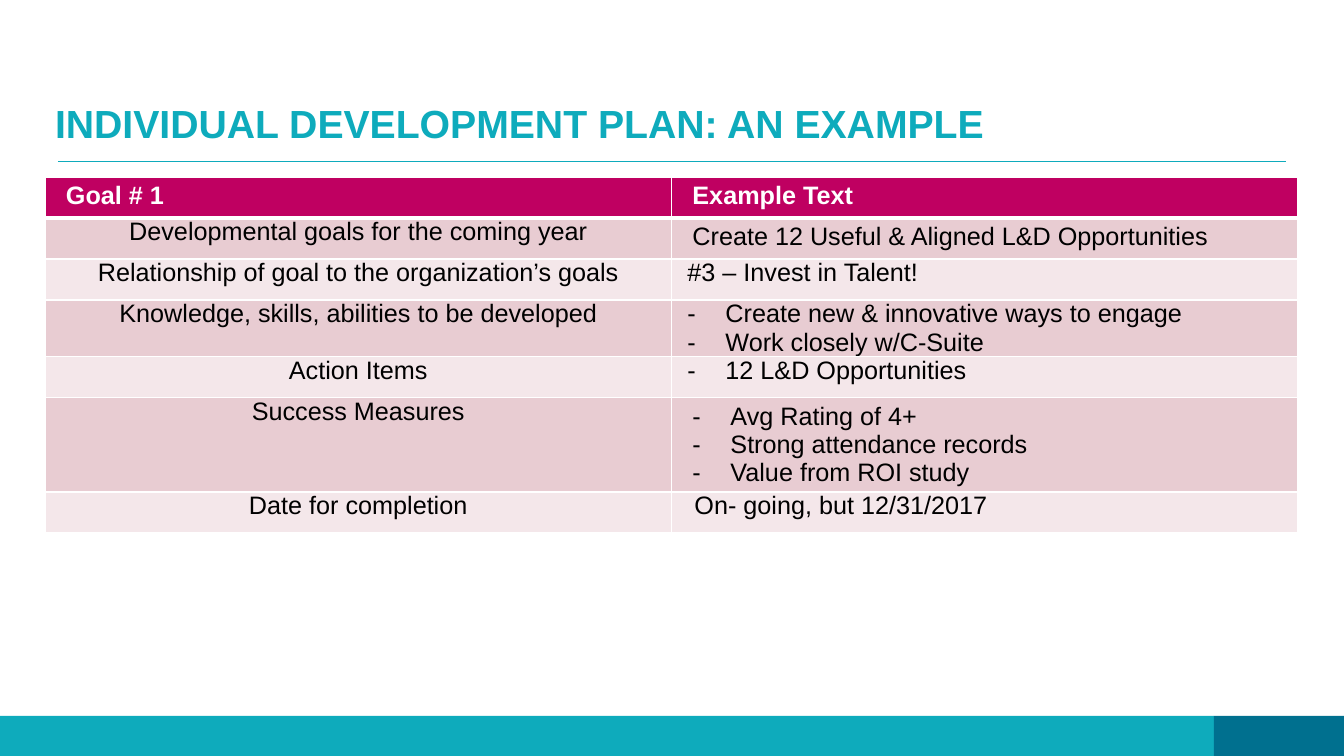
from lxml import etree
from pptx import Presentation
from pptx.dml.color import RGBColor
from pptx.enum.shapes import MSO_CONNECTOR, MSO_SHAPE
from pptx.enum.text import MSO_ANCHOR, MSO_AUTO_SIZE, PP_ALIGN
from pptx.oxml.ns import qn
from pptx.util import Pt

PX = 914400 / 100.8
LEFT, CENTER = PP_ALIGN.LEFT, PP_ALIGN.CENTER
TOP, BOTTOM = MSO_ANCHOR.TOP, MSO_ANCHOR.BOTTOM
TEAL, BLUE, MAGENTA = "0EABBC", "00708F", "BF0061"
ROSE, PALE_ROSE = "E8CCD2", "F4E7EA"
WHITE, BLACK = "FFFFFF", "000000"
ROOMY, TIGHT = (21, 5), (16, 0)
TITLE_ONLY = 5


def px(*lengths):
    """Turn pixel lengths into a list of EMU values."""
    return [round(length * PX) for length in lengths]


def rgb(color):
    return RGBColor.from_string(color)


deck = Presentation()
deck.slide_width, deck.slide_height = px(1344, 756)
page = deck.slides.add_slide(deck.slide_layouts[TITLE_ONLY])

# Footer bands and title rule
for left, width, color in [(0, 1214, TEAL), (1214, 130, BLUE)]:
    band = page.shapes.add_shape(MSO_SHAPE.RECTANGLE, *px(left, 716, width, 40))
    band.shadow.inherit = False
    band.fill.solid()
    band.fill.fore_color.rgb = rgb(color)
    band.line.fill.background()

rule = page.shapes.add_connector(MSO_CONNECTOR.STRAIGHT, *px(58, 161, 1286, 161))
rule.line.color.rgb = rgb(TEAL)
rule.line.width = Pt(0.5)
etree.SubElement(rule.element.spPr, qn("a:effectLst"))

# Title
title = page.shapes.title
title.left, title.top, title.width, title.height = px(45, 40, 1253, 112)
frame = title.text_frame
frame.text = "INDIVIDUAL DEVELOPMENT PLAN: AN EXAMPLE"
frame.auto_size = MSO_AUTO_SIZE.NONE
frame.word_wrap = True
frame.vertical_anchor = BOTTOM
para = frame.paragraphs[0]
para.alignment = LEFT
para.line_spacing = 0.9
font = para.runs[0].font
font.name, font.size, font.bold = "Arial", Pt(28), True
font.color.rgb = rgb(TEAL)

# Plan table: label, example lines, whether the lines are a list, example margins
plan = [
    ("Goal # 1", ["Example Text"], False, ROOMY),
    ("Developmental goals for the coming year",
     ["Create 12 Useful & Aligned L&D Opportunities"], False, ROOMY),
    ("Relationship of goal to the organization’s goals",
     ["#3 – Invest in Talent!"], False, TIGHT),
    ("Knowledge, skills, abilities to be developed",
     ["Create new & innovative ways to engage", "Work closely w/C-Suite"], True, TIGHT),
    ("Action Items", ["12 L&D Opportunities"], True, TIGHT),
    ("Success Measures",
     ["Avg Rating of 4+", "Strong attendance records", "Value from ROI study"],
     True, ROOMY),
    ("Date for completion", [" On- going, but 12/31/2017"], False, TIGHT),
]
table = page.shapes.add_table(len(plan), 2, *px(45, 177, 1253, 287)).table

for row, (label, examples, listed, margins) in enumerate(plan):
    header = row == 0
    row_fill = MAGENTA if header else (ROSE if row % 2 else PALE_ROSE)
    label_margins = ROOMY if header else TIGHT
    columns = [([label], False, label_margins), (examples, listed, margins)]
    for column, (lines, bulleted, (side, edge)) in enumerate(columns):
        cell = table.cell(row, column)
        cell.margin_left, cell.margin_right = px(side, side)
        cell.margin_top, cell.margin_bottom = px(edge, edge)
        cell.vertical_anchor = TOP

        borders = {"L": 1, "R": 1, "T": 3 if row == 1 else 1, "B": 3 if header else 1}
        properties = cell._tc.get_or_add_tcPr()
        for name, points in borders.items():
            border = etree.SubElement(properties, qn(f"a:ln{name}"), w=str(Pt(points)))
            solid = etree.SubElement(border, qn("a:solidFill"))
            etree.SubElement(solid, qn("a:srgbClr"), val=WHITE)
        cell.fill.solid()
        cell.fill.fore_color.rgb = rgb(row_fill)

        cell.text_frame.text = "\n".join(lines)
        for para in cell.text_frame.paragraphs:
            para.alignment = CENTER if column == 0 and not header else LEFT
            if bulleted:
                indent = px(38)[0]
                settings = para._p.get_or_add_pPr()
                settings.set("marL", str(indent))
                settings.set("indent", str(-indent))
                etree.SubElement(settings, qn("a:buFont"), typeface="Arial")
                etree.SubElement(settings, qn("a:buChar"), char="-")
            font = para.runs[0].font
            font.name, font.size, font.bold = "Arial", Pt(18), header
            font.color.rgb = rgb(WHITE if header else BLACK)

deck.save("out.pptx")
